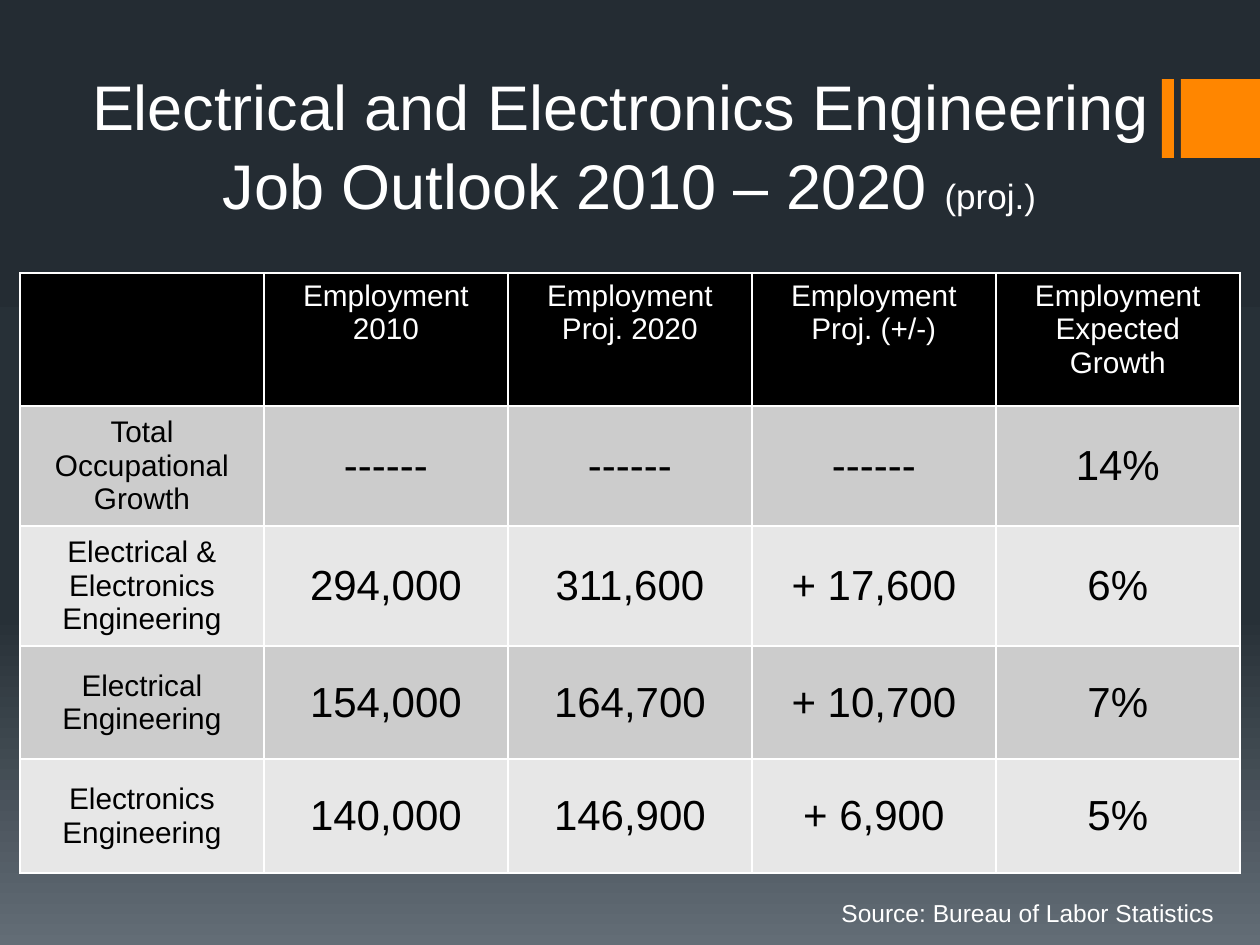
from copy import deepcopy
from typing import NamedTuple

from lxml.etree import SubElement
from pptx import Presentation
from pptx.dml.color import RGBColor
from pptx.enum.shapes import MSO_SHAPE as SHAPE
from pptx.enum.text import MSO_ANCHOR as ANCHOR, PP_ALIGN as ALIGN
from pptx.oxml.ns import qn
from pptx.slide import Slide
from pptx.util import Emu, Pt

COLORS = {
    "white": "FFFFFF", "black": "000000", "orange": "FF8600",
    "dark_row": "CCCCCC", "light_row": "E7E7E7",
    "bg_top": "242C33", "bg_mid": "273037", "bg_bottom": "636D76",
}
FONT = "Arial"
EMU_PER_PX = 914400 / 126


class Box(NamedTuple):
    x: int
    y: int
    w: int
    h: int


class Run(NamedTuple):
    text: str
    size: int
    color: str = "white"


class Row(NamedTuple):
    height: int
    fill: str
    cells: tuple[str, ...]


ACCENTS = [Box(1162, 79, 12, 79), Box(1181, 79, 79, 79)]
TITLE = [
    [Run("Electrical and Electronics Engineering ", 36)],
    [Run("Job Outlook 2010 – 2020 ", 36), Run("(proj.)", 20)],
]
SOURCE = [[Run("Source: Bureau of Labor Statistics", 14)]]
COL_WIDTH = 244
ROWS = [
    Row(133, "black", ("", "Employment 2010", "Employment Proj. 2020",
                       "Employment Proj. (+/-)", "Employment Expected Growth")),
    Row(120, "dark_row", ("Total Occupational Growth", "------", "------", "------", "14%")),
    Row(120, "light_row", ("Electrical & Electronics Engineering",
                           "294,000", "311,600", "+ 17,600", "6%")),
    Row(113, "dark_row", ("Electrical Engineering", "154,000", "164,700", "+ 10,700", "7%")),
    Row(114, "light_row", ("Electronics Engineering", "140,000", "146,900", "+ 6,900", "5%")),
]


def px(n: int) -> Emu:
    return Emu(round(n * EMU_PER_PX))


def rgb(name: str) -> RGBColor:
    return RGBColor.from_string(COLORS[name])


def add_run(p, run: Run) -> None:
    r = p.add_run()
    r.text = run.text
    r.font.name = FONT
    r.font.size = Pt(run.size)
    r.font.color.rgb = rgb(run.color)


def set_background(s: Slide) -> None:
    fill = s.background.fill
    fill.gradient()
    fill.gradient_angle = 270
    stops = s.element.find(".//" + qn("a:gsLst"))
    stops.append(deepcopy(stops[-1]))
    levels = [("bg_top", 0), ("bg_mid", 0.65), ("bg_bottom", 1)]
    for stop, (color, position) in zip(fill.gradient_stops, levels):
        stop.color.rgb = rgb(color)
        stop.position = position


def add_accent(s: Slide, box: Box) -> None:
    sp = s.shapes.add_shape(SHAPE.RECTANGLE, *map(px, box))
    sp.shadow.inherit = False
    sp.fill.solid()
    sp.fill.fore_color.rgb = rgb("orange")
    sp.line.fill.background()


def add_text(s: Slide, box: Box, paragraphs: list[list[Run]],
             align: ALIGN, anchor: ANCHOR) -> None:
    tf = s.shapes.add_textbox(*map(px, box)).text_frame
    tf.word_wrap = True
    tf.vertical_anchor = anchor
    for i, runs in enumerate(paragraphs):
        p = tf.add_paragraph() if i else tf.paragraphs[0]
        p.alignment = align
        p.space_before = Pt(2 if i else 0)
        for run in runs:
            add_run(p, run)


def add_borders(cell) -> None:
    props = cell._tc.get_or_add_tcPr()
    for i, side in enumerate(("lnL", "lnR", "lnT", "lnB")):
        ln = props.makeelement(qn(f"a:{side}"), {"w": str(Pt(1))})
        solid = SubElement(ln, qn("a:solidFill"))
        SubElement(solid, qn("a:srgbClr"), val=COLORS["white"])
        props.insert(i, ln)


def add_outlook_table(s: Slide, x: int, y: int, rows: list[Row]) -> None:
    n_cols = len(rows[0].cells)
    height = sum(row.height for row in rows)
    frame = s.shapes.add_table(len(rows), n_cols, *map(px, (x, y, n_cols * COL_WIDTH, height)))
    table = frame.table
    for col in table.columns:
        col.width = px(COL_WIDTH)
    for i, row in enumerate(rows):
        table.rows[i].height = px(row.height)
        for j, text in enumerate(row.cells):
            cell = table.cell(i, j)
            cell.fill.solid()
            cell.fill.fore_color.rgb = rgb(row.fill)
            cell.vertical_anchor = ANCHOR.MIDDLE if i else ANCHOR.TOP
            add_borders(cell)
            p = cell.text_frame.paragraphs[0]
            p.alignment = ALIGN.CENTER
            if text:
                add_run(p, Run(text, 24 if i and j else 17, "black" if i else "white"))


def main() -> None:
    prs = Presentation()
    prs.slide_width, prs.slide_height = px(1260), px(945)
    s = prs.slides.add_slide(prs.slide_layouts[6])
    set_background(s)
    for box in ACCENTS:
        add_accent(s, box)
    add_text(s, Box(73, 63, 1113, 165), TITLE, ALIGN.CENTER, ANCHOR.BOTTOM)
    add_outlook_table(s, 20, 273, ROWS)
    add_text(s, Box(829, 892, 410, 43), SOURCE, ALIGN.LEFT, ANCHOR.TOP)
    prs.save("out.pptx")


if __name__ == "__main__":
    main()
